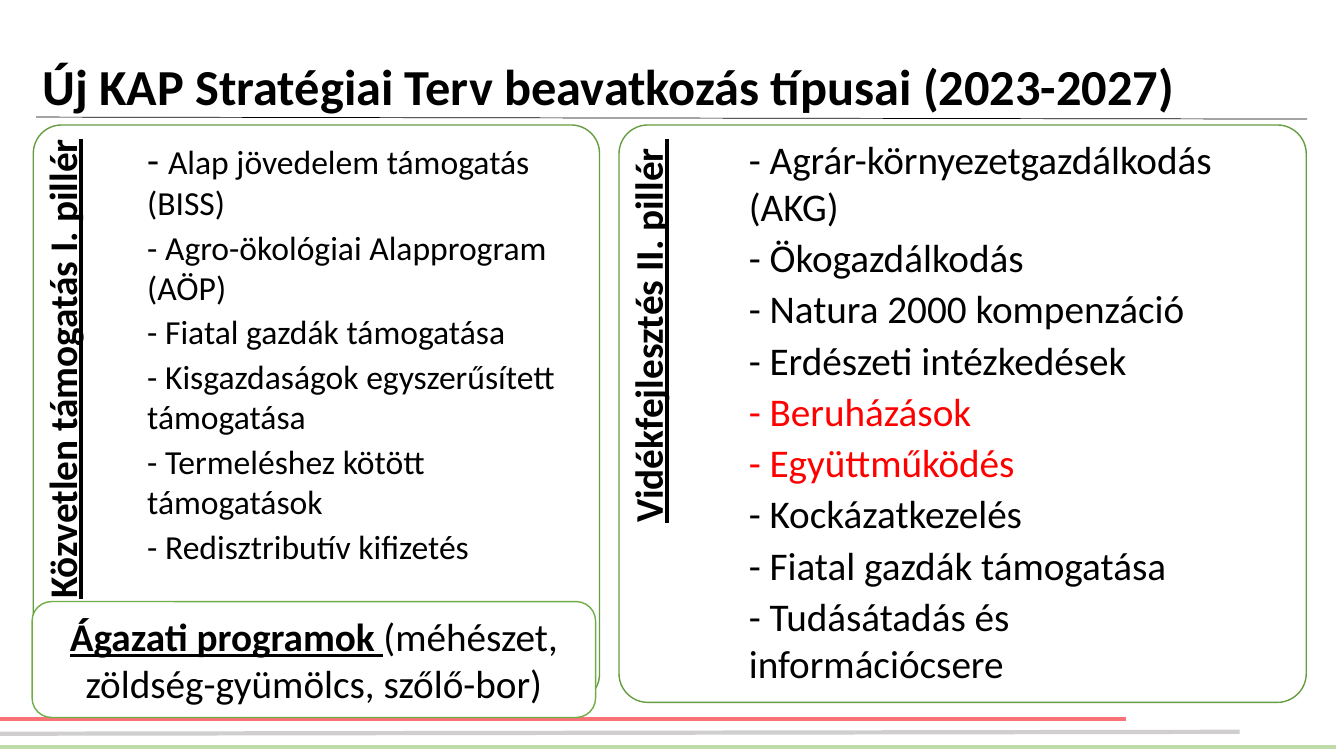
from pptx import Presentation
from pptx.dml.color import RGBColor
from pptx.enum.shapes import MSO_CONNECTOR, MSO_SHAPE
from pptx.enum.text import MSO_ANCHOR, MSO_AUTO_SIZE, PP_ALIGN
from pptx.oxml.ns import qn
from pptx.util import Cm, Pt
from lxml import etree

BLACK = RGBColor(0x00, 0x00, 0x00)
WHITE = RGBColor(0xFF, 0xFF, 0xFF)
RED = RGBColor(0xFF, 0x00, 0x00)
CORAL = RGBColor(0xF9, 0x73, 0x76)
LIME = RGBColor(0xBE, 0xDC, 0xAA)
GREY = RGBColor(0xD0, 0xCE, 0xCE)
GREEN = RGBColor(0x66, 0x9D, 0x40)
LEAF = RGBColor(0x70, 0xAD, 0x47)
STRAIGHT = MSO_CONNECTOR.STRAIGHT
ROUND = MSO_SHAPE.ROUNDED_RECTANGLE
TOP, MIDDLE = MSO_ANCHOR.TOP, MSO_ANCHOR.MIDDLE
LEFT, CENTER, RIGHT = PP_ALIGN.LEFT, PP_ALIGN.CENTER, PP_ALIGN.RIGHT
NONE = MSO_AUTO_SIZE.NONE


def style(font, size, color=BLACK, bold=False):
    font.name = "Calibri"
    font.size = Pt(size)
    font.color.rgb = color
    font.bold = bold
    font.underline = bold


def add_card(x, y, w, h, color):
    card = shapes.add_shape(ROUND, Cm(x), Cm(y), Cm(w), Cm(h))
    card.shadow.inherit = False
    card.fill.solid()
    card.fill.fore_color.rgb = WHITE
    card.line.color.rgb = color
    card.line.width = Pt(1)
    return card


deck = Presentation()
deck.slide_width, deck.slide_height = Cm(33.87), Cm(19.05)
slide = deck.slides.add_slide(deck.slide_layouts[3])
shapes = slide.shapes
title, *lists = slide.placeholders

rules = [
    (0, 18.11, 28.37, 18.11, CORAL, 3),
    (0, 18.82, 33.68, 18.82, LIME, 3),
    (0, 18.49, 31.24, 18.44, GREY, 3),
    (0.91, 2.95, 32.94, 3, BLACK, 0.5),
]
for x1, y1, x2, y2, color, width in rules:
    rule = shapes.add_connector(STRAIGHT, Cm(x1), Cm(y1), Cm(x2), Cm(y2))
    rule.line.color.rgb = color
    rule.line.width = Pt(width)
    etree.SubElement(rule._element.spPr, qn("a:effectLst"))

title.left, title.top, title.width, title.height = Cm(0.81), Cm(0), Cm(32.41), Cm(4.5)
frame = title.text_frame
frame.text = "Új KAP Stratégiai Terv beavatkozás típusai (2023-2027)"
frame.vertical_anchor = MIDDLE
frame.auto_size = NONE
head = frame.paragraphs[0]
head.alignment = LEFT
head.line_spacing = 0.9
style(head.font, 36, bold=True)
head.font.underline = False

card_top, card_high, label_len = 3.15, 14.55, 11.94
pillars = [
    (0.84, 14.27, "Közvetlen támogatás I. pillér", 2.84, 3.71, 10.64, 24, [
        "- Alap jövedelem támogatás (BISS)",
        "- Agro-ökológiai Alapprogram (AÖP)",
        "- Fiatal gazdák támogatása",
        "- Kisgazdaságok egyszerűsített támogatása",
        "- Termeléshez kötött támogatások",
        "- Redisztributív kifizetés",
    ]),
    (15.6, 17.32, "Vidékfejlesztés II. pillér ", 3.45, 18.87, 12.9, 28, [
        "- Agrár-környezetgazdálkodás (AKG)",
        "- Ökogazdálkodás",
        "- Natura 2000 kompenzáció",
        "- Erdészeti intézkedések",
        "- Beruházások",
        "- Együttműködés",
        "- Kockázatkezelés",
        "- Fiatal gazdák támogatása",
        "- Tudásátadás és információcsere",
    ]),
]
marked = {"- Beruházások", "- Együttműködés"}

for body, pillar in zip(lists, pillars):
    x, wide, name, deep, list_x, list_w, size, items = pillar
    card = add_card(x, card_top, wide, card_high, GREEN)
    card.adjustments[0] = 0.05

    label = shapes.add_textbox(
        Cm(x + (deep - label_len) / 2), Cm(card_top + (label_len - deep) / 2),
        Cm(label_len), Cm(deep))
    label.rotation = 270
    frame = label.text_frame
    frame.word_wrap = True
    frame.margin_left = frame.margin_bottom = 0
    frame.margin_top, frame.margin_right = Cm(0.25), Cm(0.36)
    frame.text = name
    para = frame.paragraphs[0]
    para.alignment = RIGHT
    para.line_spacing = 0.9
    style(para.font, 28, bold=True)

    shapes._spTree.append(body._element)
    body.left, body.top = Cm(list_x), Cm(card_top)
    body.width, body.height = Cm(list_w), Cm(card_high)
    frame = body.text_frame
    frame.margin_left = frame.margin_right = frame.margin_bottom = 0
    frame.margin_top = Cm(0.25)
    frame.vertical_anchor = TOP
    frame.auto_size = NONE
    frame.text = "\n".join(items)
    for para in frame.paragraphs:
        props = para._p.get_or_add_pPr()
        props.set("marL", "0")
        props.set("indent", "0")
        etree.SubElement(props, qn("a:buNone"))
        para.space_before = Pt(0)
        para.space_after = Pt(3)
        style(para.font, size, RED if para.text in marked else BLACK)

first = lists[0].text_frame.paragraphs[0]
lead = first.runs[0]
rest = first.add_run()
rest.text = lead.text[2:]
lead.text = "- "
lead.font.size = Pt(28)

sector = add_card(0.81, 15.16, 14.2, 2.92, LEAF)
frame = sector.text_frame
frame.word_wrap = True
frame.vertical_anchor = MIDDLE
para = frame.paragraphs[0]
para.alignment = CENTER
for text, bold in [("Ágazati programok ", True), ("(méhészet, zöldség-gyümölcs, szőlő-bor)", False)]:
    run = para.add_run()
    run.text = text
    style(run.font, 28, bold=bold)

deck.save("out.pptx")
